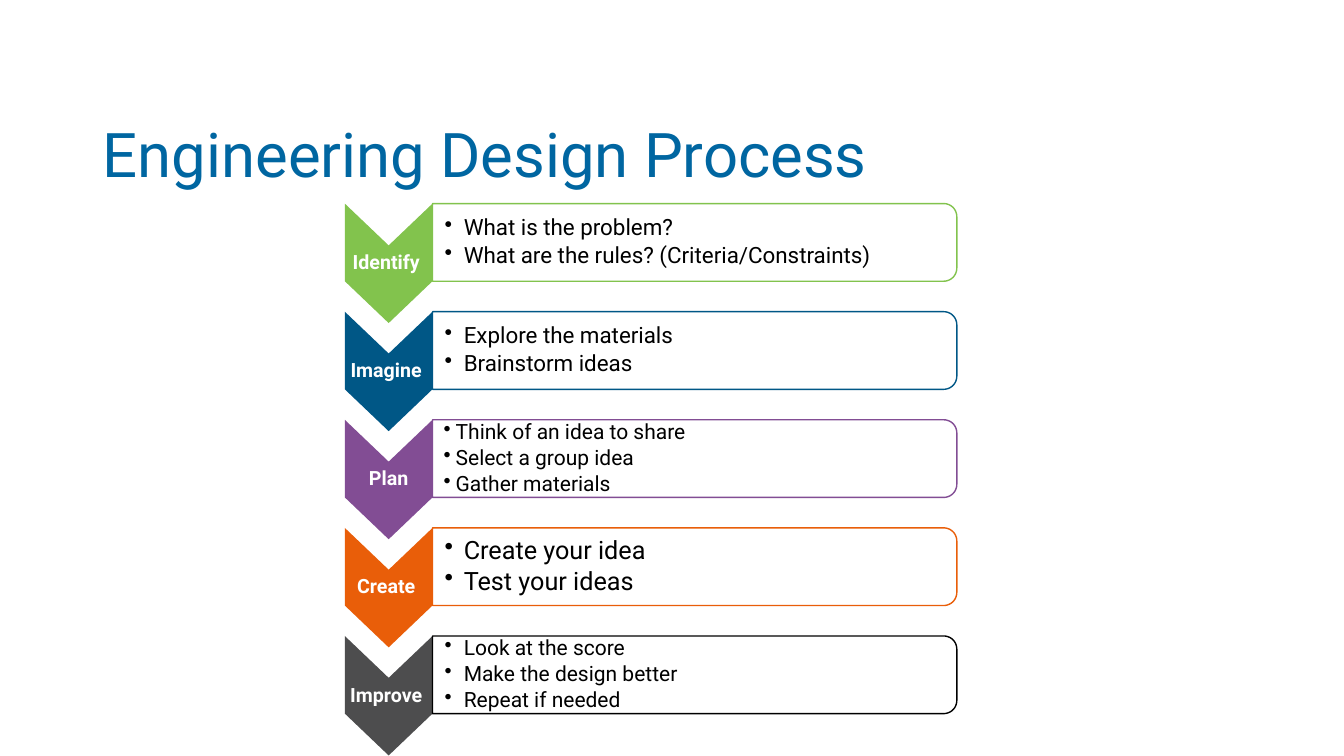
from math import cos, pi, sin

from lxml.etree import SubElement
from pptx import Presentation
from pptx.dml.color import RGBColor
from pptx.enum.text import MSO_ANCHOR as Anchor, PP_ALIGN as Align
from pptx.oxml.ns import qn
from pptx.util import Inches, Pt


def color(value):
    return RGBColor.from_string(value)


def add_outline(shapes, points):
    """Draw a closed outline from points in inches."""
    corners = [(Inches(x), Inches(y)) for x, y in points]
    builder = shapes.build_freeform(*corners[0], scale=1.0)
    builder.add_line_segments(corners[1:], close=True)
    shape = builder.convert_to_shape()
    shape.shadow.inherit = False
    return shape


presentation = Presentation()
presentation.slide_width = Inches(13.33)
presentation.slide_height = Inches(7.5)
slide = presentation.slides.add_slide(presentation.slide_layouts[5])

# Title
title = slide.shapes.title
title.left, title.top = Inches(0.92), Inches(0.84)
title.width, title.height = Inches(11.5), Inches(1.45)
title.text_frame.text = "Engineering Design Process"
title.text_frame.vertical_anchor = Anchor.MIDDLE
paragraph = title.text_frame.paragraphs[0]
paragraph.alignment = Align.LEFT
paragraph.line_spacing = 0.9
font = paragraph.runs[0].font
font.name, font.size = "Roboto", Pt(44)
font.color.rgb = color("0066A1")

# Steps: label, chevron colour, panel line, text size, left inset, indent, bullets
steps = [
    ("Identify ", "82C34D", "82C34D", 16, 0.12, 0.19,
     ["What is the problem?", "What are the rules? (Criteria/Constraints)"]),
    ("Imagine ", "005786", "005786", 16, 0.12, 0.19,
     ["Explore the materials", "Brainstorm ideas"]),
    ("Plan", "824D94", "824D94", 15, 0.11, 0.12,
     ["Think of an idea to share", "Select a group idea", "Gather materials"]),
    ("Create ", "E95E09", "E95E09", 18, 0.12, 0.19,
     ["Create your idea", "Test your ideas"]),
    ("Improve ", "4D4D4E", "000000", 15, 0.12, 0.19,
     ["Look at the score", "Make the design better", "Repeat if needed"]),
]
left, middle, seam, right = 3.42, 3.855, 4.29, 9.49
first_top, last_top = 2.02, 6.31
pitch = (last_top - first_top) / (len(steps) - 1)
panel_height, notch, radius = 0.77, 0.415, 0.13
arc = [(radius * sin(k * pi / 32), radius * cos(k * pi / 32)) for k in range(17)]

diagram = slide.shapes.add_group_shape().shapes
for row, (label, fill, line, size, inset, indent, bullets) in enumerate(steps):
    top = first_top + row * pitch
    bottom = top + panel_height

    # Chevron with the step name
    chevron = add_outline(diagram, [
        (seam, top), (seam, bottom), (middle, bottom + notch),
        (left, bottom), (left, top), (middle, top + notch)])
    chevron.fill.solid()
    chevron.fill.fore_color.rgb = color(fill)
    chevron.line.fill.background()

    # Panel with rounded right corners
    center_x = right - radius
    panel = add_outline(diagram, [
        (seam, top),
        *[(center_x + x, top + radius - y) for x, y in arc],
        *[(center_x + x, bottom - radius + y) for x, y in reversed(arc)],
        (seam, bottom)])
    panel.line.color.rgb = color(line)
    panel.line.width = Pt(1)
    if label == "Plan":
        panel.fill.background()
    else:
        panel.fill.solid()
        panel.fill.fore_color.rgb = color("FFFFFF")
        white = panel.fill._xPr.find(".//" + qn("a:srgbClr"))
        SubElement(white, qn("a:alpha"), val="90000")

    # Text of both shapes
    texts = [
        (chevron, [label], (0.01, 0.47, 0.01, 0.47), Align.CENTER, 0.35,
         {"size": Pt(14), "bold": True}, "FFFFFF"),
        (panel, bullets, (inset, 0.05, 0.05, 0.05), Align.LEFT, 0.15,
         {"size": Pt(size), "bold": False}, "000000"),
    ]
    for shape, lines, margins, alignment, gap, format_values, text_color in texts:
        frame = shape.text_frame
        frame.word_wrap = True
        frame.vertical_anchor = Anchor.MIDDLE
        for side, margin in zip(("left", "top", "right", "bottom"), margins):
            setattr(frame, f"margin_{side}", Inches(margin))
        frame.text = "\n".join(lines)
        for paragraph in frame.paragraphs:
            if shape is panel:
                properties = paragraph._p.get_or_add_pPr()
                properties.set("marL", str(Inches(indent)))
                properties.set("indent", str(-Inches(indent)))
                SubElement(properties, qn("a:buChar"), char="•")
                paragraph.level = 1
            paragraph.alignment = alignment
            paragraph.line_spacing = 0.9
            paragraph.space_after = Pt(gap * format_values["size"].pt)
            font = paragraph.runs[0].font
            font.name = "Roboto"
            font.color.rgb = color(text_color)
            for name, value in format_values.items():
                setattr(font, name, value)

presentation.save("out.pptx")
